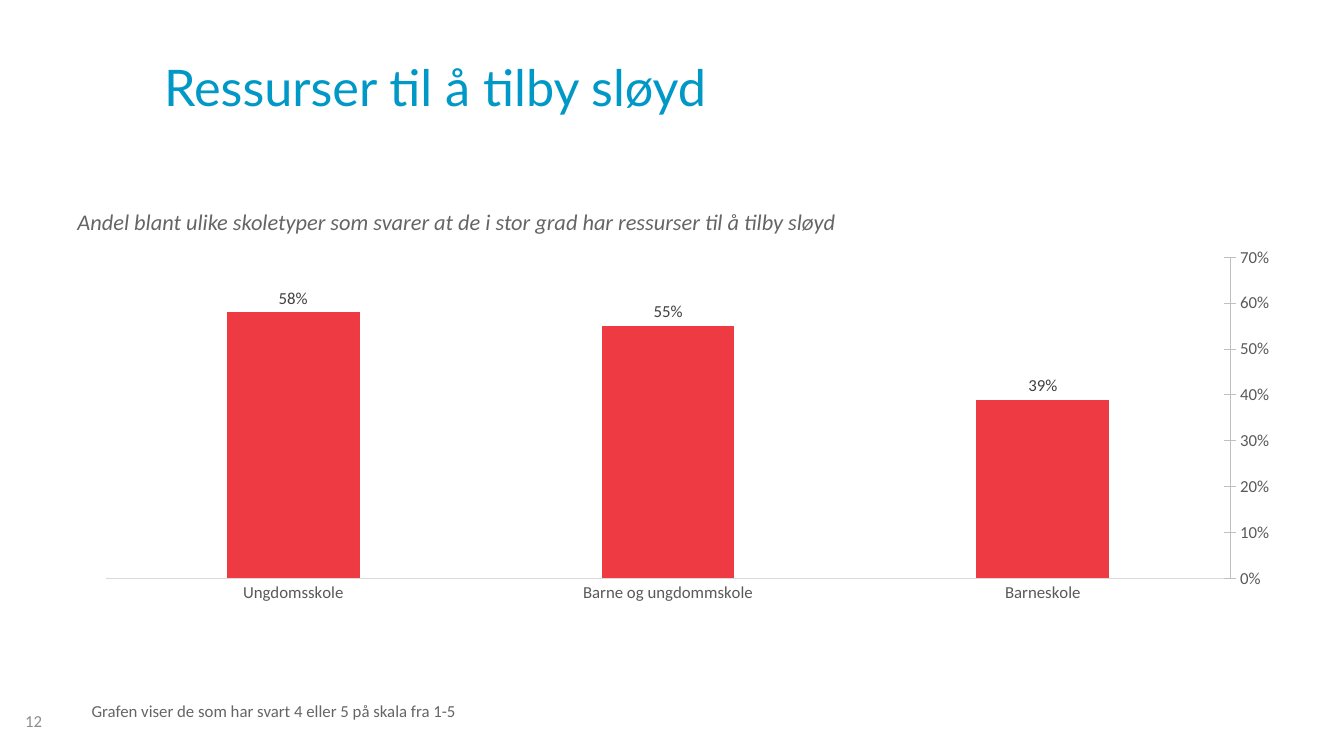
from typing import NamedTuple

from pptx import Presentation
from pptx.chart.data import CategoryChartData
from pptx.dml.color import RGBColor
from pptx.enum.chart import XL_CHART_TYPE as ChartType
from pptx.enum.chart import XL_LABEL_POSITION as LabelPos
from pptx.enum.chart import XL_TICK_MARK as Tick
from pptx.enum.text import MSO_ANCHOR as Anchor
from pptx.util import Inches, Pt

COLORS = {
    "title": "0098C6",
    "body": "656567",
    "number": "8C8C8C",
    "bar": "EE3A43",
    "label": "404040",
    "axis_text": "595959",
    "cat_line": "D9D9D9",
    "val_line": "BFBFBF",
}
SHARES = {"Barneskole": 0.39, "Barne og ungdommskole": 0.55, "Ungdomsskole": 0.58}


class Label(NamedTuple):
    """A single-paragraph text box."""

    text: str
    left: float
    top: float
    width: float
    height: float
    size: int
    color: str
    anchor: Anchor
    font: str = "Calibri"
    italic: bool = False


LABELS = [
    Label("Ressurser til å tilby sløyd", 1.53, 0.23, 11.3, 1.25, 36, "title", Anchor.MIDDLE, "Lato"),
    Label("Andel blant ulike skoletyper som svarer at de i stor grad har ressurser til å tilby sløyd",
          0.67, 1.68, 7.79, 0.7, 16, "body", Anchor.BOTTOM, italic=True),
    Label("Grafen viser de som har svart 4 eller 5 på skala fra 1-5",
          0.81, 6.5, 7.79, 0.7, 12, "body", Anchor.BOTTOM),
    Label("12", 0.15, 6.95, 3.11, 0.4, 12, "number", Anchor.MIDDLE),
]


def set_font(font, name: str, size: int, color: str) -> None:
    """Apply typeface, size and colour to a font."""
    font.name = name
    font.size = Pt(size)
    font.color.rgb = RGBColor.from_string(COLORS[color])


def add_label(s, label: Label) -> None:
    """Draw one text box."""
    sp = s.shapes.add_textbox(*map(Inches, label[1:5]))
    tf = sp.text_frame
    tf.word_wrap = True
    tf.vertical_anchor = label.anchor
    p = tf.paragraphs[0]
    p.text = label.text
    set_font(p.font, label.font, label.size, label.color)
    p.font.italic = label.italic


def style_axis(axis, tick: Tick, line: str) -> None:
    """Set the text, line and ticks of a chart axis."""
    axis.has_major_gridlines = False
    axis.major_tick_mark = tick
    axis.minor_tick_mark = Tick.NONE
    set_font(axis.tick_labels.font, "Calibri", 12, "axis_text")
    axis.format.line.color.rgb = RGBColor.from_string(COLORS[line])
    axis.format.line.width = Pt(0.75)


def add_share_chart(s) -> None:
    """Draw the column chart of shares per school type."""
    data = CategoryChartData(number_format="0%")
    data.categories = list(SHARES)
    data.add_series("Series 1", list(SHARES.values()))
    box = map(Inches, (0.81, 2.38, 12.02, 3.67))
    chart = s.shapes.add_chart(ChartType.COLUMN_CLUSTERED, *box, data).chart
    chart.has_title = False
    chart.has_legend = False
    chart.font.name = "Calibri"
    chart.font.size = Pt(10)

    style_axis(chart.category_axis, Tick.NONE, "cat_line")
    chart.category_axis.reverse_order = True
    val_axis = chart.value_axis
    style_axis(val_axis, Tick.CROSS, "val_line")
    val_axis.minimum_scale, val_axis.maximum_scale, val_axis.major_unit = 0, 0.7, 0.1
    val_axis.tick_labels.number_format = "0%"
    val_axis.tick_labels.number_format_is_linked = False

    plot = chart.plots[0]
    plot.gap_width = 182
    plot.vary_by_categories = False
    fill = plot.series[0].format.fill
    fill.solid()
    fill.fore_color.rgb = RGBColor.from_string(COLORS["bar"])
    labels = plot.series[0].data_labels
    labels.show_value = True
    labels.position = LabelPos.OUTSIDE_END
    labels.number_format = "0%"
    labels.number_format_is_linked = False
    set_font(labels.font, "Calibri", 12, "label")


def main() -> None:
    """Build and save the slide."""
    prs = Presentation()
    prs.slide_width, prs.slide_height = Inches(13.33), Inches(7.5)
    s = prs.slides.add_slide(prs.slide_layouts[6])
    add_share_chart(s)
    for label in LABELS:
        add_label(s, label)
    prs.save("out.pptx")


if __name__ == "__main__":
    main()
